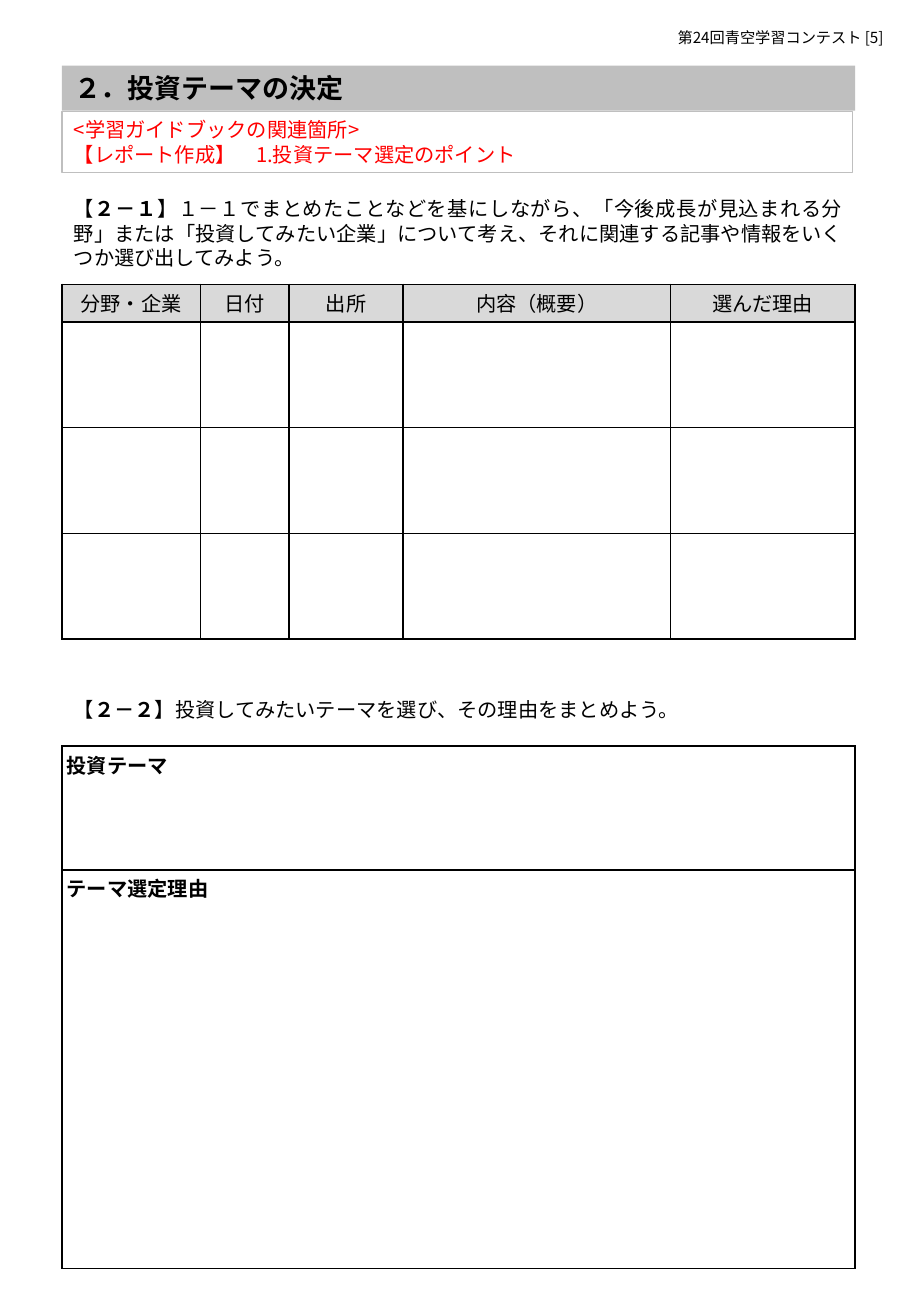
from pptx import Presentation
from pptx.dml.color import RGBColor as RGB
from pptx.enum.shapes import MSO_SHAPE as SHAPE
from pptx.enum.text import MSO_ANCHOR as ANCHOR, MSO_AUTO_SIZE as FIT, PP_ALIGN as ALIGN
from pptx.oxml import parse_xml
from pptx.oxml.ns import nsdecls
from pptx.util import Inches, Pt

FONT = "Noto Sans CJK JP"
BLACK = RGB(0x00, 0x00, 0x00)
RED = RGB(0xFF, 0x00, 0x00)
GREY = RGB(0xBF, 0xBF, 0xBF)
PALE = RGB(0xD9, 0xD9, 0xD9)
LEFT, WIDTH = Inches(0.51), Inches(6.53)
BODY = 12


def write(para, *runs, size=BODY, color=BLACK, align=ALIGN.LEFT):
    """Add (text, bold) runs to a paragraph with lines 1.2 times the size."""
    para.alignment = align
    para.line_spacing = Pt(size * 1.2)
    para.space_before = Pt(0)
    for text, bold in runs:
        run = para.add_run()
        run.text = text
        font = run.font
        font.name, font.size, font.bold = FONT, Pt(size), bold
        font.color.rgb = color
        run._r.get_or_add_rPr().find("{*}latin").addnext(
            parse_xml(f'<a:ea {nsdecls("a")} typeface="{FONT}"/>'))


def grid(top, cols, rows):
    """Add a plain table with black 1 pt borders."""
    table = slide.shapes.add_table(
        len(rows), len(cols), LEFT, Inches(top), WIDTH, Inches(sum(rows))).table
    table.first_row = table.horz_banding = False
    for col, wide in zip(table.columns, cols):
        col.width = Inches(wide)
    for row, high in zip(table.rows, rows):
        row.height = Inches(high)
    for cell in table.iter_cells():
        cell.margin_left = cell.margin_right = Inches(0.04)
        cell.margin_top = cell.margin_bottom = Inches(0.04)
        cell.fill.background()
        props = cell._tc.get_or_add_tcPr()
        for i, side in enumerate(("lnL", "lnR", "lnT", "lnB")):
            props.insert(i, parse_xml(
                f'<a:{side} {nsdecls("a")} w="12700"><a:solidFill>'
                f'<a:srgbClr val="{BLACK}"/></a:solidFill></a:{side}>'))
    return table


deck = Presentation()
deck.slide_width, deck.slide_height = Inches(7.5), Inches(10.83)
slide = deck.slides.add_slide(deck.slide_layouts[5])

# Title bar
title = slide.shapes.title
title.left, title.top, title.width, title.height = LEFT, Inches(0.54), WIDTH, Inches(0.37)
title.fill.solid()
title.fill.fore_color.rgb = GREY
frame = title.text_frame
frame.auto_size, frame.vertical_anchor = FIT.NONE, ANCHOR.MIDDLE
write(frame.paragraphs[0], ("２．投資テーマの決定", True), size=16)

# Page header
head = slide.shapes.add_textbox(Inches(5.48), Inches(0.18), Inches(2.02), Inches(0.25))
write(head.text_frame.paragraphs[0], ("第24回青空学習コンテスト [5]", False), size=9)

# Guidebook reference
guide = slide.shapes.add_shape(SHAPE.RECTANGLE, LEFT, Inches(0.92), Inches(6.51), Inches(0.5))
guide.shadow.inherit = False
guide.fill.background()
guide.line.color.rgb = GREY
guide.line.width = Pt(0.75)
frame = guide.text_frame
frame.vertical_anchor = ANCHOR.TOP
write(frame.paragraphs[0], ("<学習ガイドブックの関連箇所>", False),
      color=RED, align=ALIGN.JUSTIFY)
write(frame.add_paragraph(), ("【レポート作成】　1.投資テーマ選定のポイント", False),
      color=RED, align=ALIGN.JUSTIFY)

# Questions
for top, high, mark, text in (
    (1.57, 0.5, "２－１", "】１－１でまとめたことなどを基にしながら、「今後成長が見込まれる分野」"
     "または「投資してみたい企業」について考え、それに関連する記事や情報をいくつか選び出してみよう。"),
    (5.69, 0.3, "２－２", "】投資してみたいテーマを選び、その理由をまとめよう。"),
):
    box = slide.shapes.add_textbox(LEFT, Inches(top), WIDTH, Inches(high))
    box.text_frame.word_wrap = True
    write(box.text_frame.paragraphs[0], ("【", False), (mark, True), (text, False),
          align=ALIGN.JUSTIFY)

# Article table
news = grid(2.34, (1.14, 0.73, 0.94, 2.2, 1.52), (0.31, 0.87, 0.87, 0.87))
for i, name in enumerate(("分野・企業", "日付", "出所", "内容（概要）", "選んだ理由")):
    cell = news.cell(0, i)
    cell.fill.solid()
    cell.fill.fore_color.rgb = PALE
    cell.vertical_anchor = ANCHOR.MIDDLE
    cell.margin_top = Inches(0.07)
    write(cell.text_frame.paragraphs[0], (name, False), align=ALIGN.CENTER)

# Theme table
theme = grid(6.14, (6.53,), (1.02, 3.28))
for i, name in enumerate(("投資テーマ", "テーマ選定理由")):
    cell = theme.cell(i, 0)
    cell.margin_top = Inches(0.07)
    write(cell.text_frame.paragraphs[0], (name, True))

deck.save("out.pptx")
